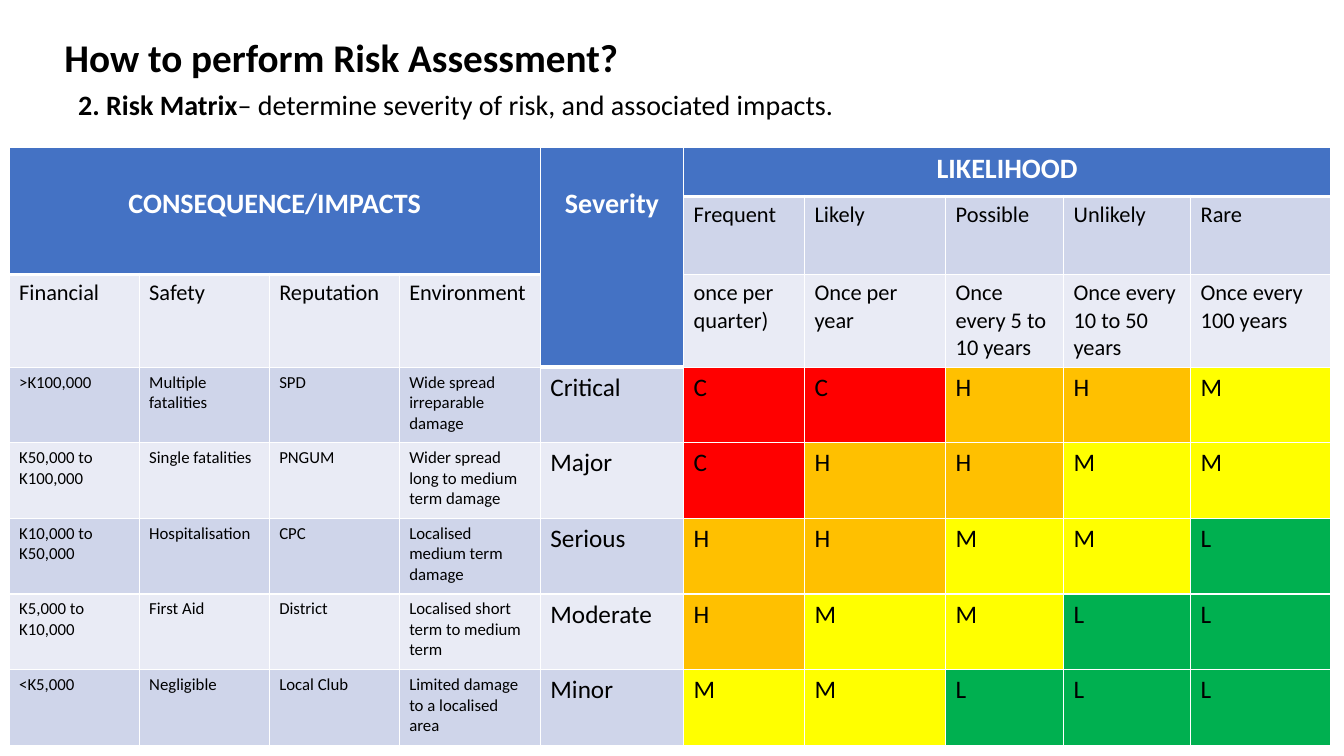
from lxml import etree
from pptx import Presentation
from pptx import util as u
from pptx.dml.color import RGBColor
from pptx.enum import text
from pptx.oxml import ns

COLORS = {
    "ink": "000000", "white": "FFFFFF", "header": "4472C4",
    "dark_band": "CFD5EA", "light_band": "E9EBF5",
    "C": "FF0000", "H": "FFC000", "M": "FFFF00", "L": "00B050",
}
FONT = "Calibri"
COLUMN_WEIGHTS = [1.29, 1.29, 1.29, 1.4, 1.42, 1.2, 1.4, 1.17, 1.26, 1.39]
ROW_WEIGHTS = [0.49, 0.77, 0.92] + [0.75] * 5
HEADER_DEPTHS = [2] * 4 + [3] + [1] * 5
SEVERITY_COLUMN = 4
FIRST_LEVEL_ROW = 3
HEADERS = [
    (0, 0, 1, 3, "CONSEQUENCE/IMPACTS", 0.39),
    (0, 4, 2, 4, "Severity", 0.39),
    (0, 5, 0, 9, "LIKELIHOOD", 0.05),
]
IMPACTS = ["Financial", "Safety", "Reputation", "Environment"]
LIKELIHOODS = ["Frequent", "Likely", "Possible", "Unlikely", "Rare"]
FREQUENCIES = [
    "once per quarter)", "Once per year", "Once every 5 to 10 years",
    "Once every 10 to 50 years", "Once every 100 years",
]
LEVELS = [
    (">K100,000", "Multiple fatalities", "SPD",
     "Wide spread irreparable damage", "Critical", "CCHHM"),
    ("K50,000 to K100,000", "Single fatalities", "PNGUM",
     "Wider spread long to medium term damage", "Major", "CHHMM"),
    ("K10,000 to K50,000", "Hospitalisation", "CPC",
     "Localised medium term damage", "Serious", "HHMML"),
    ("K5,000 to K10,000", "First Aid", "District",
     "Localised short term to medium term", "Moderate", "HMMLL"),
    ("<K5,000", "Negligible", "Local Club",
     "Limited damage to a localised area", "Minor", "MMLLL"),
]


def color(name):
    return RGBColor.from_string(COLORS[name])


def style_paragraph(paragraph, size, color_name="ink", bold=None):
    paragraph.font.name = FONT
    paragraph.font.size = u.Pt(size)
    paragraph.font.color.rgb = color(color_name)
    paragraph.font.bold = bold


def add_text(slide, box, runs, size, anchor, line_spacing=1.0):
    shape = slide.shapes.add_textbox(*box)
    frame = shape.text_frame
    frame.word_wrap = True
    frame.vertical_anchor = anchor
    paragraph = frame.paragraphs[0]
    paragraph.line_spacing = line_spacing
    style_paragraph(paragraph, size)
    for words, bold in runs:
        run = paragraph.add_run()
        run.text = words
        run.font.bold = bold


def add_heading(slide, box):
    left, top, width, height = box
    add_text(slide, (left, top, width, int(height * 0.78)),
             [("How to perform Risk Assessment?", True)],
             28, text.MSO_ANCHOR.MIDDLE, 0.9)
    add_text(slide, (left + int(width * 0.012), top + int(height * 0.6),
                     int(width * 0.77), int(height * 0.4)),
             [("2. Risk Matrix", True),
              ("– determine severity of risk, and associated impacts.", False)],
             20, text.MSO_ANCHOR.TOP)


def set_borders(cell, top, bottom):
    properties = cell._tc.get_or_add_tcPr()
    for side, points in (("L", 1), ("R", 1), ("T", top), ("B", bottom)):
        line = etree.SubElement(properties, ns.qn(f"a:ln{side}"), w=str(u.Pt(points)))
        fill = etree.SubElement(line, ns.qn("a:solidFill"))
        etree.SubElement(fill, ns.qn("a:srgbClr"), val=COLORS["white"])


def paint_cell(cell, row, column):
    depth = HEADER_DEPTHS[column]
    set_borders(cell, 3 if row == depth else 1, 3 if row < depth else 1)
    if row < depth:
        fill = "header"
    elif row >= FIRST_LEVEL_ROW and column > SEVERITY_COLUMN:
        fill = LEVELS[row - FIRST_LEVEL_ROW][-1][column - SEVERITY_COLUMN - 1]
    else:
        fill = "dark_band" if row % 2 else "light_band"
    cell.fill.solid()
    cell.fill.fore_color.rgb = color(fill)


def write_cells(table, row, first_column, words, size):
    for column, word in enumerate(words, first_column):
        cell = table.cell(row, column)
        cell.text = word
        style_paragraph(cell.text_frame.paragraphs[0], size, bold=False)


def add_risk_matrix(slide, box):
    left, top, width, height = box
    table = slide.shapes.add_table(
        len(ROW_WEIGHTS), len(COLUMN_WEIGHTS), left, top, width, height).table
    for column, weight in zip(table.columns, COLUMN_WEIGHTS):
        column.width = int(width * weight / sum(COLUMN_WEIGHTS))
    for row, weight in zip(table.rows, ROW_WEIGHTS):
        row.height = int(height * weight / sum(ROW_WEIGHTS))
    for row in range(len(ROW_WEIGHTS)):
        for column in range(len(COLUMN_WEIGHTS)):
            paint_cell(table.cell(row, column), row, column)

    for first_row, first_column, last_row, last_column, title, margin in HEADERS:
        cell = table.cell(first_row, first_column)
        cell.merge(table.cell(last_row, last_column))
        cell.text = title
        cell.margin_top = u.Inches(margin)
        paragraph = cell.text_frame.paragraphs[0]
        paragraph.alignment = text.PP_ALIGN.CENTER
        style_paragraph(paragraph, 20, "white", True)

    write_cells(table, 1, SEVERITY_COLUMN + 1, LIKELIHOODS, 16)
    write_cells(table, 2, 0, IMPACTS, 16)
    write_cells(table, 2, SEVERITY_COLUMN + 1, FREQUENCIES, 16)
    for row, (*impacts, severity, ratings) in enumerate(LEVELS, FIRST_LEVEL_ROW):
        write_cells(table, row, 0, impacts, 12)
        write_cells(table, row, SEVERITY_COLUMN, [severity, *ratings], 18)


def main():
    presentation = Presentation()
    presentation.slide_width = u.Inches(13.33)
    presentation.slide_height = u.Inches(7.5)
    slide = presentation.slides.add_slide(presentation.slide_layouts[6])
    add_heading(slide, [u.Inches(n) for n in (0.54, 0.16, 11.5, 1.1)])
    add_risk_matrix(slide, [u.Inches(n) for n in (0.09, 1.46, 13.11, 5.93)])
    presentation.save("out.pptx")


if __name__ == "__main__":
    main()
